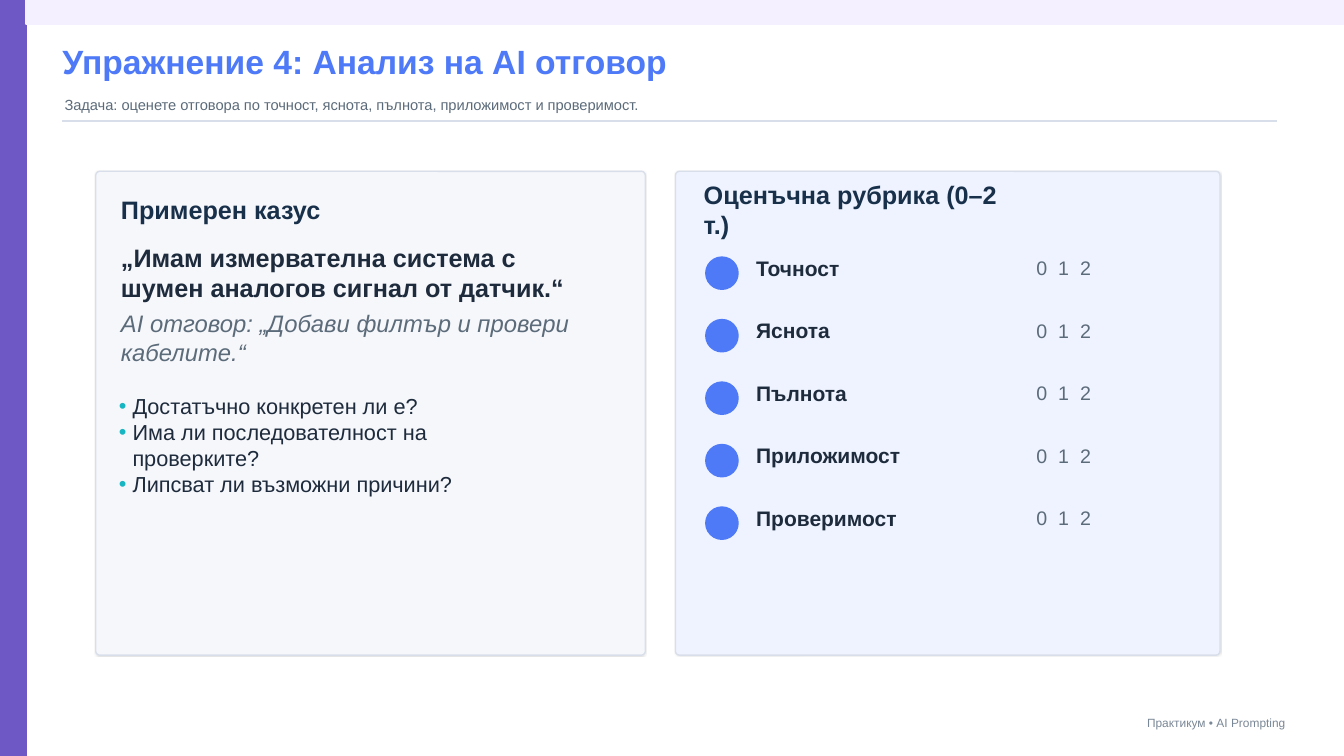
from lxml.etree import SubElement
from pptx import Presentation
from pptx.dml.color import RGBColor
from pptx.enum.shapes import MSO_CONNECTOR, MSO_SHAPE
from pptx.enum.text import MSO_ANCHOR, PP_ALIGN
from pptx.oxml import parse_xml
from pptx.oxml.ns import nsdecls, qn
from pptx.util import Inches, Pt

PURPLE = RGBColor(0x6E, 0x58, 0xC6)
LILAC = RGBColor(0xF4, 0xF0, 0xFF)
BLUE = RGBColor(0x4E, 0x79, 0xF7)
NAVY = RGBColor(0x18, 0x30, 0x4A)
INK = RGBColor(0x1E, 0x2B, 0x3C)
SLATE = RGBColor(0x5C, 0x6B, 0x7A)
FOOTER_GRAY = RGBColor(0x7A, 0x87, 0x96)
BORDER = RGBColor(0xD9, 0xDF, 0xEA)
CASE_FILL = RGBColor(0xF6, 0xF7, 0xFB)
RUBRIC_FILL = RGBColor(0xEE, 0xF3, 0xFF)
TEAL = RGBColor(0x18, 0xB6, 0xC2)

CELL = Inches(0.1)
COLUMNS, ROWS = 133.3, 75
BAR, BAND = 2.6, 2.4
PANEL_TOP, PANEL_HEIGHT = 17, 48
RUBRIC_TOP, RUBRIC_STEP = 25.5, 6.2

presentation = Presentation()
presentation.slide_width = int(COLUMNS * CELL)
presentation.slide_height = ROWS * CELL
slide = presentation.slides.add_slide(presentation.slide_layouts[6])


def add_box(kind, left, top, width, height, fill, line):
    shape = slide.shapes.add_shape(kind, *(int(n * CELL) for n in (left, top, width, height)))
    shape.shadow.inherit = False
    shape.fill.solid()
    shape.fill.fore_color.rgb = fill
    shape.line.color.rgb = line
    shape.line.width = Pt(1)
    return shape


def add_text(lines, left, top, width, height, size, color, bold=False, italic=False,
             align=PP_ALIGN.LEFT, anchor=MSO_ANCHOR.MIDDLE):
    box = slide.shapes.add_textbox(*(int(n * CELL) for n in (left, top, width, height)))
    frame = box.text_frame
    frame.word_wrap = True
    frame.vertical_anchor = anchor
    frame.margin_left = frame.margin_top = frame.margin_right = frame.margin_bottom = 0
    frame.text = lines
    for paragraph in frame.paragraphs:
        paragraph.alignment = align
        for run in paragraph.runs:
            run.font.name = "Arial"
            run.font.size = Pt(size)
            run.font.color.rgb = color
            run.font.bold = bold
            run.font.italic = italic
    return frame


add_box(MSO_SHAPE.RECTANGLE, 0, 0, BAR, ROWS, PURPLE, PURPLE)
add_box(MSO_SHAPE.RECTANGLE, BAR, 0, COLUMNS - BAR, BAND, LILAC, LILAC)

add_text("Упражнение 4: Анализ на AI отговор", 6.2, 3.8, 93, 4.6, 24, BLUE, bold=True)
add_text("Задача: оценете отговора по точност, яснота, пълнота, приложимост и проверимост.",
         6.4, 9.3, 110, 2.2, 10.5, SLATE)
divider = slide.shapes.add_connector(
    MSO_CONNECTOR.STRAIGHT, *(int(n * CELL) for n in (6.2, 12, 126.7, 12)))
divider.line.color.rgb = BORDER
divider.line.width = Pt(1.2)
SubElement(divider._element.spPr, qn("a:effectLst"))
add_text("Практикум • AI Prompting", 102.5, 70.8, 25, 1.8, 8.5, FOOTER_GRAY, align=PP_ALIGN.RIGHT)

for left, width, fill in ((9.5, 54.5, CASE_FILL), (67, 54, RUBRIC_FILL)):
    panel = add_box(MSO_SHAPE.ROUNDED_RECTANGLE, left, PANEL_TOP, width, PANEL_HEIGHT, fill, BORDER)
    panel.adjustments[0] = 0.008
    effects = panel._element.spPr.find(qn("a:effectLst"))
    effects.append(parse_xml(
        f'<a:outerShdw {nsdecls("a")} blurRad="{Pt(0.5)}" dist="{Pt(0.2)}" dir="2700000" '
        'algn="tl" rotWithShape="0"><a:srgbClr val="000000"><a:alpha val="10000"/>'
        '</a:srgbClr></a:outerShdw>'))

add_text("Примерен казус", 12, 19.8, 21, 2, 18, NAVY, bold=True)
add_text("„Имам измервателна система с шумен аналогов сигнал от датчик.“",
         12, 24.5, 47.5, 5, 18, INK, bold=True)
add_text("AI отговор: „Добави филтър и провери кабелите.“", 12, 32, 46, 3, 17, SLATE, italic=True)

questions = add_text(
    "Достатъчно конкретен ли е?\nИма ли последователност на проверките?\nЛипсват ли възможни причини?",
    11.8, 39, 42, 18, 15.5, INK, anchor=MSO_ANCHOR.TOP)
for paragraph in questions.paragraphs:
    properties = paragraph._p.get_or_add_pPr()
    properties.set("marL", str(int(1.35 * CELL)))
    properties.set("indent", str(int(-1.35 * CELL)))
    bullet_color = SubElement(properties, qn("a:buClr"))
    SubElement(bullet_color, qn("a:srgbClr"), val=str(TEAL))
    SubElement(properties, qn("a:buFont"), typeface="Arial")
    SubElement(properties, qn("a:buChar"), char="•")

add_text("Оценъчна рубрика (0–2 т.)", 69.8, 19.8, 30, 2, 18, NAVY, bold=True)
for index, criterion in enumerate(("Точност", "Яснота", "Пълнота", "Приложимост", "Проверимост")):
    top = RUBRIC_TOP + index * RUBRIC_STEP
    add_box(MSO_SHAPE.OVAL, 70, top, 3.2, 3.2, BLUE, BLUE)
    add_text(criterion, 75, top + 0.3, 20, 1.6, 15, INK, bold=True)
    scores = add_text("0 1 2", 101.5, top + 0.3, 8, 1.6, 14, SLATE, align=PP_ALIGN.CENTER)
    scores.paragraphs[0].runs[0]._r.get_or_add_rPr().set("spc", "195")

presentation.save("out.pptx")
